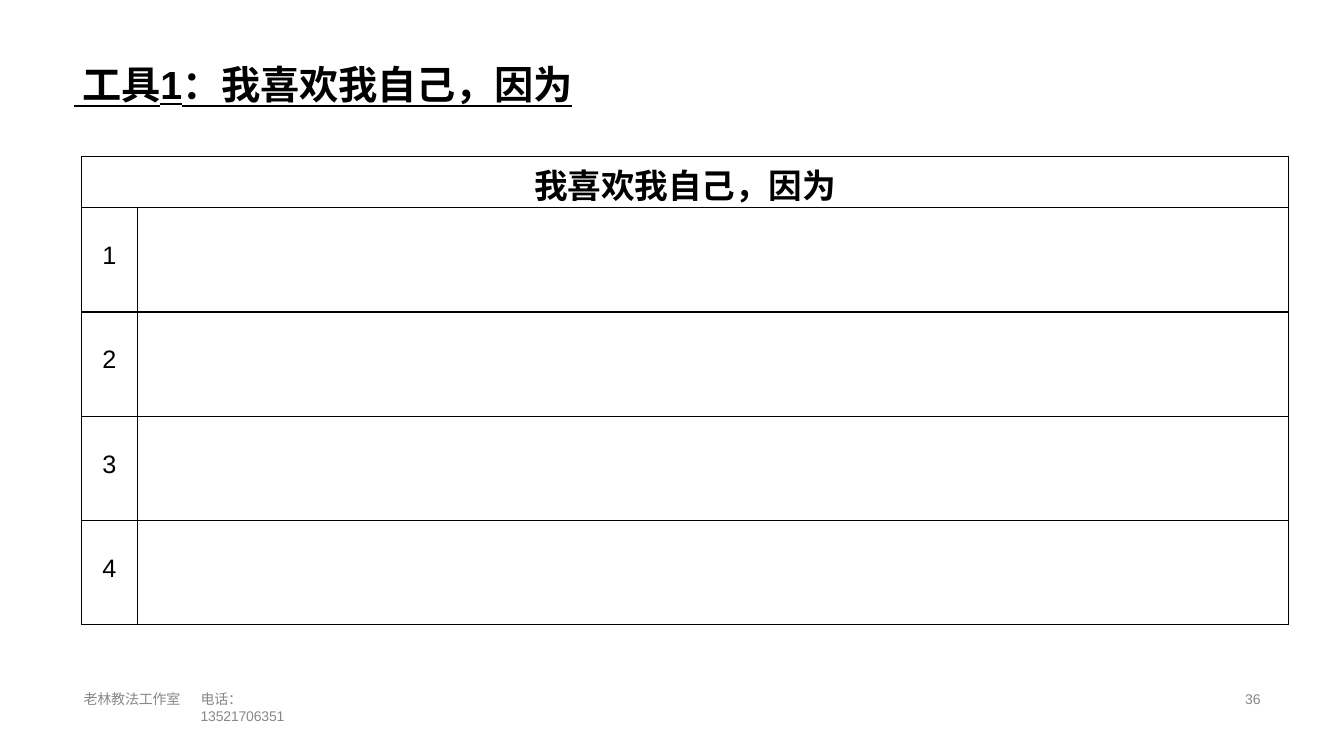
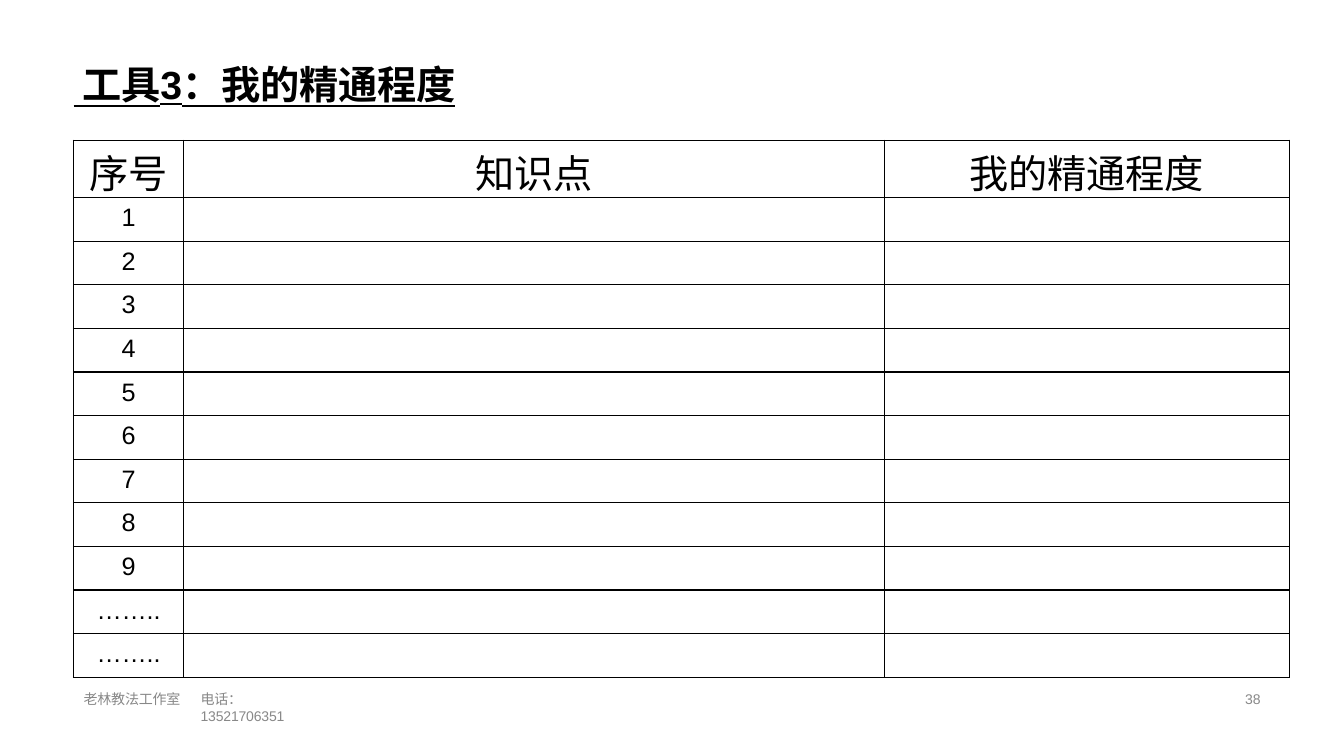
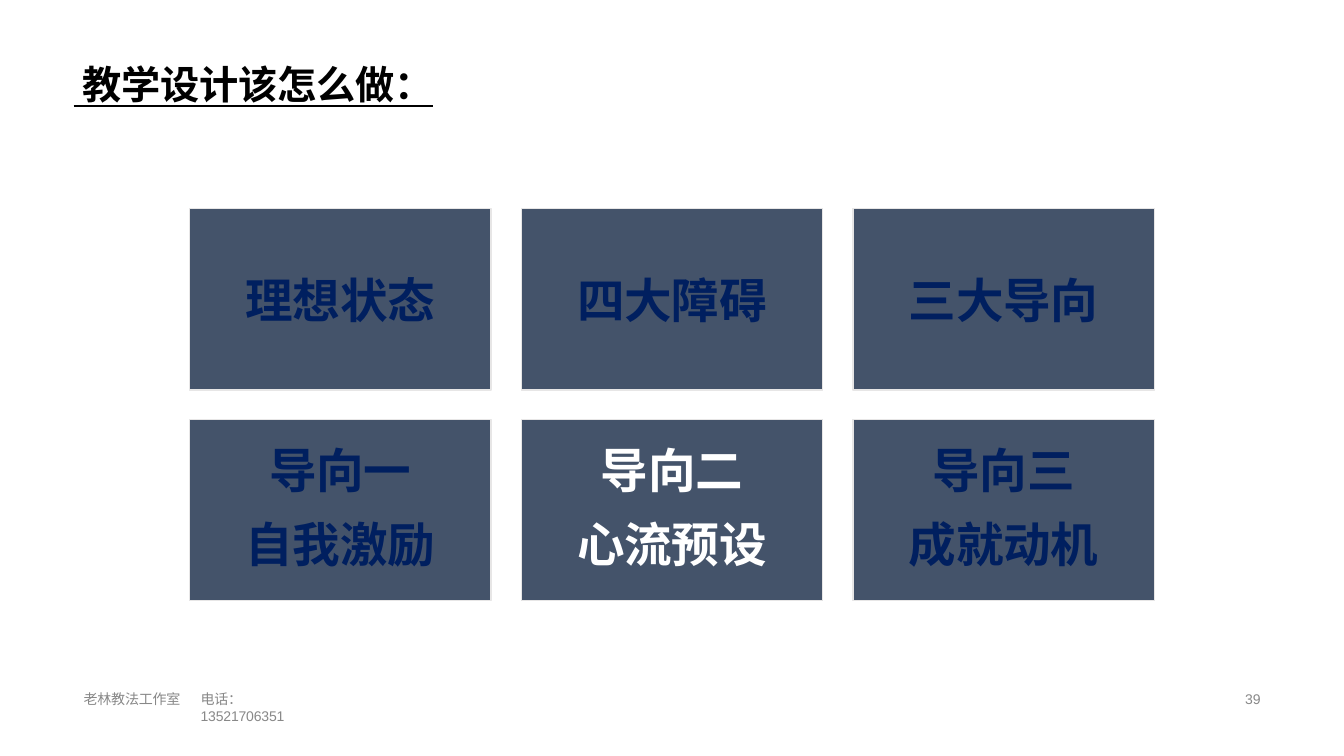
from dataclasses import dataclass
from pptx import Presentation
from pptx.dml.color import RGBColor
from pptx.enum.shapes import MSO_SHAPE
from pptx.enum.text import MSO_ANCHOR, PP_ALIGN
from pptx.oxml import parse_xml
from pptx.oxml.ns import nsdecls
from pptx.util import Inches, Pt


@dataclass(frozen=True)
class Theme:
    ink: str = "000000"
    gray: str = "888888"
    navy: str = "001F5F"
    slate: str = "44536A"
    edge: str = "E7E6E6"
    white: str = "FFFFFF"
    latin: str = "Arial"
    han: str = "Noto Sans CJK SC"
    title: int = 28
    card: int = 34
    body: int = 18
    foot: int = 10


T = Theme()
SIZE = (13.33, 7.5)

FOOT = [
    ("老林教法工作室", 0.83, 6.83, 1.0),
    ("电话：\n13521706351", 1.99, 6.83, 1.29),
]

GRIDS = [
    dict(
        title=" 工具1：我喜欢我自己，因为", page=36,
        at=(0.81, 1.55), cols=(0.55, 11.42), tall=4.65, top=0.51,
        head=["我喜欢我自己，因为"], size=24, bold=True, lift=0.08,
        rows=["1", "2", "3", "4"],
    ),
    dict(
        title=" 工具3：我的精通程度", page=38,
        at=(0.73, 1.39), cols=(1.09, 6.95, 4.02), tall=5.33, top=0.57,
        head=["序号", "知识点", "我的精通程度"], size=28, bold=False, lift=0.03,
        rows=[str(n) for n in range(1, 10)] + ["…….."] * 2,
    ),
]

PLAN = dict(
    title=" 教学设计该怎么做：", page=39, hot="导向二\n心流预设",
    at=(1.88, 2.07), card=(2.99, 1.8), step=(3.29, 2.09),
    rows=[
        ["理想状态", "四大障碍", "三大导向"],
        ["导向一\n自我激励", "导向二\n心流预设", "导向三\n成就动机"],
    ],
)


def rgb(tone):
    return RGBColor.from_string(tone)


def write(frame, text, size, tone=T.ink, bold=False, line=False,
          align=PP_ALIGN.LEFT, han=T.han):
    frame.text = text
    for par in frame.paragraphs:
        par.alignment = align
        for run in par.runs:
            font = run.font
            font.name, font.size, font.bold = T.latin, Pt(size), bold
            font.underline = line
            font.color.rgb = rgb(tone)
            prop = run._r.get_or_add_rPr()
            prop.set("spc", "-10")
            prop.append(parse_xml(f'<a:ea {nsdecls("a")} typeface="{han}"/>'))


def pad(item, top=0, low=0):
    item.margin_left = item.margin_right = 0
    item.margin_top, item.margin_bottom = Inches(top), Inches(low)


def label(slide, text, x, y, w, h, size, top=0.02, **look):
    box = slide.shapes.add_textbox(*map(Inches, (x, y, w, h)))
    box.text_frame.word_wrap = True
    pad(box.text_frame, top)
    write(box.text_frame, text, size, **look)


def page(deck, data):
    slide = deck.slides.add_slide(deck.slide_layouts[6])
    label(slide, data["title"], 0.73, 0.58, 11.89, 0.49, T.title,
          bold=True, line=True)
    for text, x, y, w in FOOT:
        label(slide, text, x, y, w, 0.21, T.foot, tone=T.gray)
    label(slide, str(data["page"]), 12.35, 6.85, 0.21, 0.18, T.foot,
          top=0, tone=T.gray)
    return slide


def frame(cell):
    prop = cell._tc.get_or_add_tcPr()
    for side in "LRTB":
        prop.append(parse_xml(
            f'<a:ln{side} {nsdecls("a")} w="{Pt(1)}"><a:solidFill>'
            f'<a:srgbClr val="{T.ink}"/></a:solidFill></a:ln{side}>'))
    cell.fill.background()
    pad(cell)


def grid(slide, data):
    cols, rows = data["cols"], data["rows"]
    spot = (*data["at"], sum(cols), data["tall"])
    table = slide.shapes.add_table(
        len(rows) + 1, len(cols), *map(Inches, spot)).table
    table.first_row = table.horz_banding = False
    for col, wide in zip(table.columns, cols):
        col.width = Inches(wide)
    for row in table.rows:
        row.height = Inches((data["tall"] - data["top"]) / len(rows))
    table.rows[0].height = Inches(data["top"])
    for cell in table.iter_cells():
        frame(cell)
    if len(data["head"]) == 1:
        table.cell(0, 0).merge(table.cell(0, len(cols) - 1))
    for c, text in enumerate(data["head"]):
        cell = table.cell(0, c)
        pad(cell, 0.03)
        write(cell.text_frame, text, data["size"], bold=data["bold"],
              align=PP_ALIGN.CENTER)
    for r, text in enumerate(rows, 1):
        cell = table.cell(r, 0)
        pad(cell, low=data["lift"])
        cell.vertical_anchor = MSO_ANCHOR.MIDDLE
        write(cell.text_frame, text, T.body, align=PP_ALIGN.CENTER, han=T.latin)


def cards(slide, data):
    (x, y), (dx, dy) = data["at"], data["step"]
    for r, row in enumerate(data["rows"]):
        for c, text in enumerate(row):
            spot = (x + c * dx, y + r * dy, *data["card"])
            card = slide.shapes.add_shape(
                MSO_SHAPE.RECTANGLE, *map(Inches, spot))
            card.shadow.inherit = False
            card.fill.solid()
            card.fill.fore_color.rgb = rgb(T.slate)
            card.line.color.rgb = rgb(T.edge)
            card.line.width = Pt(1)
            body = card.text_frame
            body.word_wrap = True
            pad(body, 0.05 * r)
            body.vertical_anchor = MSO_ANCHOR.TOP if r else MSO_ANCHOR.MIDDLE
            tone = T.white if text == data["hot"] else T.navy
            write(body, text, T.card, tone, bold=True, align=PP_ALIGN.CENTER)
            for par in body.paragraphs:
                par.line_spacing = 1.29 if r else 1.0


def main():
    deck = Presentation()
    deck.slide_width, deck.slide_height = map(Inches, SIZE)
    for data in GRIDS:
        grid(page(deck, data), data)
    cards(page(deck, PLAN), PLAN)
    deck.save("out.pptx")


if __name__ == "__main__":
    main()
